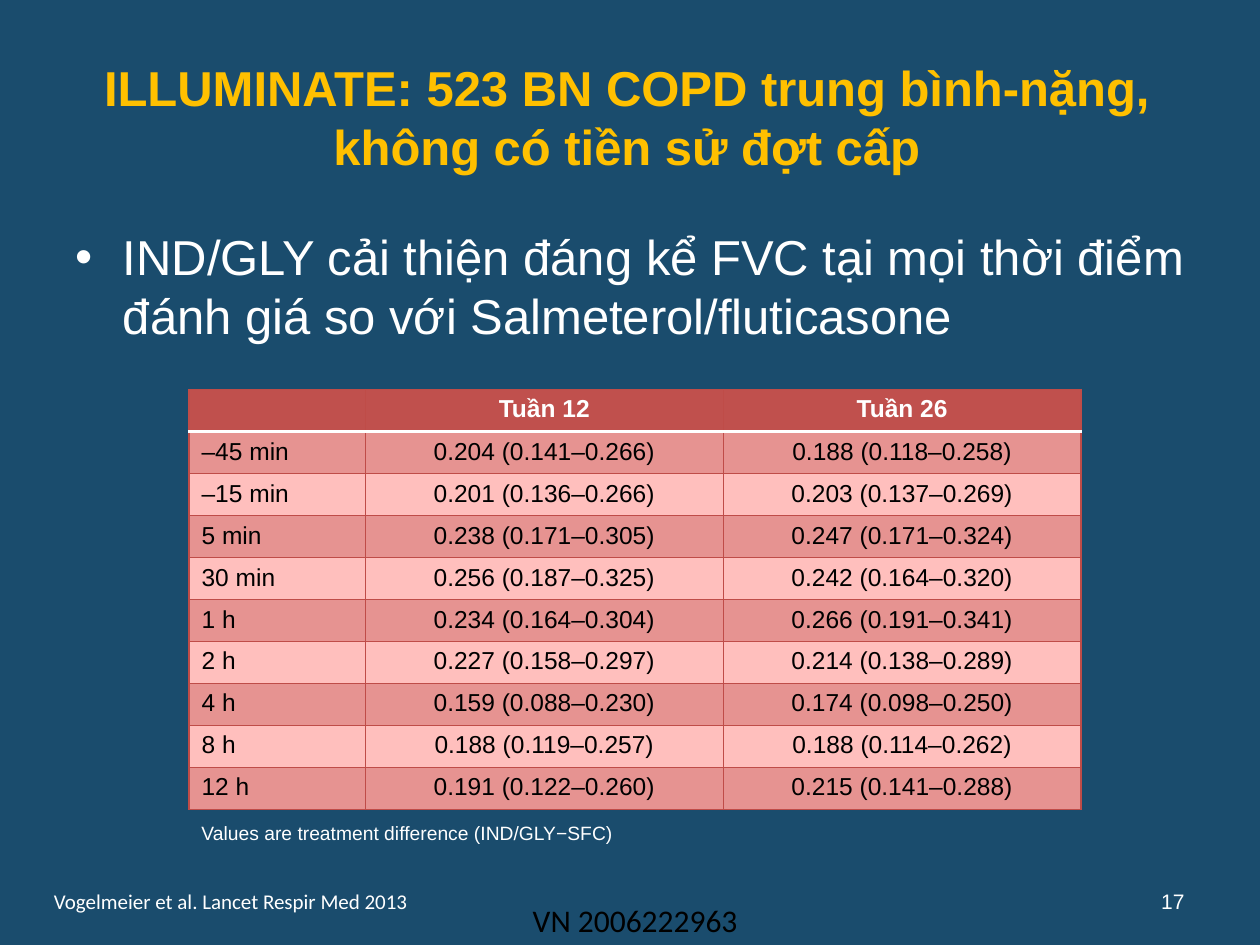
import pptx
import pptx.dml.color
import pptx.enum.text
import pptx.oxml
import pptx.util
from pptx.util import Inches

COLORS = {"bg": "1A4C6D", "title": "FFC000", "white": "FFFFFF", "black": "000000",
          "header": "C0504D", "dark": "E69391", "light": "FFBFBD", "border": "BF4C48"}
ALIGN = pptx.enum.text.PP_ALIGN
ANCHOR = pptx.enum.text.MSO_ANCHOR
NS = "http://schemas.openxmlformats.org/drawingml/2006/main"


def rgb(name):
    return pptx.dml.color.RGBColor.from_string(COLORS[name])


def put_text(tf, text, size, color="white", font="Arial", bold=False,
             align=ALIGN.LEFT, anchor=ANCHOR.TOP):
    tf.word_wrap = True
    tf.vertical_anchor = anchor
    p = tf.paragraphs[0]
    p.alignment = align
    r = p.add_run()
    r.text = text
    r.font.size = pptx.util.Pt(size)
    r.font.name = font
    r.font.bold = bold
    r.font.color.rgb = rgb(color)


prs = pptx.Presentation()
prs.slide_width, prs.slide_height = Inches(10), Inches(7.5)
s = prs.slides.add_slide(prs.slide_layouts[1])
s.background.fill.solid()
s.background.fill.fore_color.rgb = rgb("bg")

# Title and bullet
title, body = s.placeholders
for sp, box in ((title, (0.25, 0.3, 9.45, 1.25)), (body, (0.5, 1.75, 9, 4.95))):
    sp.left, sp.top, sp.width, sp.height = [Inches(v) for v in box]
    sp.text_frame.auto_size = pptx.enum.text.MSO_AUTO_SIZE.NONE
put_text(title.text_frame, "ILLUMINATE: 523 BN COPD trung bình-nặng, không có tiền sử đợt cấp",
         28, color="title", bold=True, align=ALIGN.CENTER, anchor=ANCHOR.MIDDLE)
put_text(body.text_frame, "IND/GLY cải thiện đáng kể FVC tại mọi thời điểm "
         "đánh giá so với Salmeterol/fluticasone", 28)

# Table of FVC differences
rows = [
    ("", "Tuần 12", "Tuần 26"),
    ("–45 min", "0.204 (0.141–0.266)", "0.188 (0.118–0.258)"),
    ("–15 min", "0.201 (0.136–0.266)", "0.203 (0.137–0.269)"),
    ("5 min", "0.238 (0.171–0.305)", "0.247 (0.171–0.324)"),
    ("30 min", "0.256 (0.187–0.325)", "0.242 (0.164–0.320)"),
    ("1 h", "0.234 (0.164–0.304)", "0.266 (0.191–0.341)"),
    ("2 h", "0.227 (0.158–0.297)", "0.214 (0.138–0.289)"),
    ("4 h", "0.159 (0.088–0.230)", "0.174 (0.098–0.250)"),
    ("8 h", "0.188 (0.119–0.257)", "0.188 (0.114–0.262)"),
    ("12 h", "0.191 (0.122–0.260)", "0.215 (0.141–0.288)"),
]
table = s.shapes.add_table(len(rows), 3, Inches(1.5), Inches(3.09),
                           Inches(7.09), Inches(3.33)).table
for col, width in zip(table.columns, (1.4, 2.84, 2.84)):
    col.width = Inches(width)
for i, row in enumerate(rows):
    fill = "header" if i == 0 else "dark" if i % 2 else "light"
    for j, text in enumerate(row):
        cell = table.cell(i, j)
        if text:
            put_text(cell.text_frame, text, 14, color="black" if i else "white",
                     bold=i == 0, align=ALIGN.CENTER if j else ALIGN.LEFT)
        else:
            cell.text_frame.paragraphs[0]._p.get_or_add_endParaRPr().set("sz", "1400")
        tcPr = cell._tc.get_or_add_tcPr()
        for side in "LRTB":
            under_header = (i, side) in ((0, "B"), (1, "T"))
            color, width = ("white", 2) if under_header else ("border", 0.75)
            tcPr.append(pptx.oxml.parse_xml(
                f'<a:ln{side} xmlns:a="{NS}" w="{pptx.util.Pt(width)}"><a:solidFill>'
                f'<a:srgbClr val="{COLORS[color]}"/></a:solidFill></a:ln{side}>'))
        cell.fill.solid()
        cell.fill.fore_color.rgb = rgb(fill)

# Notes under the table and footer
labels = [
    ("17", (7.17, 6.95, 2.33, 0.4), 12, dict(align=ALIGN.RIGHT, anchor=ANCHOR.MIDDLE)),
    ("Vogelmeier et al. Lancet Respir Med 2013", (0.33, 7, 5.83, 0.3), 12, dict(font="Calibri")),
    ("Values are treatment difference (IND/GLY−SFC)", (1.5, 6.46, 6.09, 0.29), 11,
     dict(anchor=ANCHOR.BOTTOM)),
    ("VN 2006222963", (4.13, 7.1, 1.83, 0.4), 18, dict(font="Calibri", color="black")),
]
for text, box, size, style in labels:
    sp = s.shapes.add_textbox(*[Inches(v) for v in box])
    put_text(sp.text_frame, text, size, **style)

prs.save("out.pptx")
